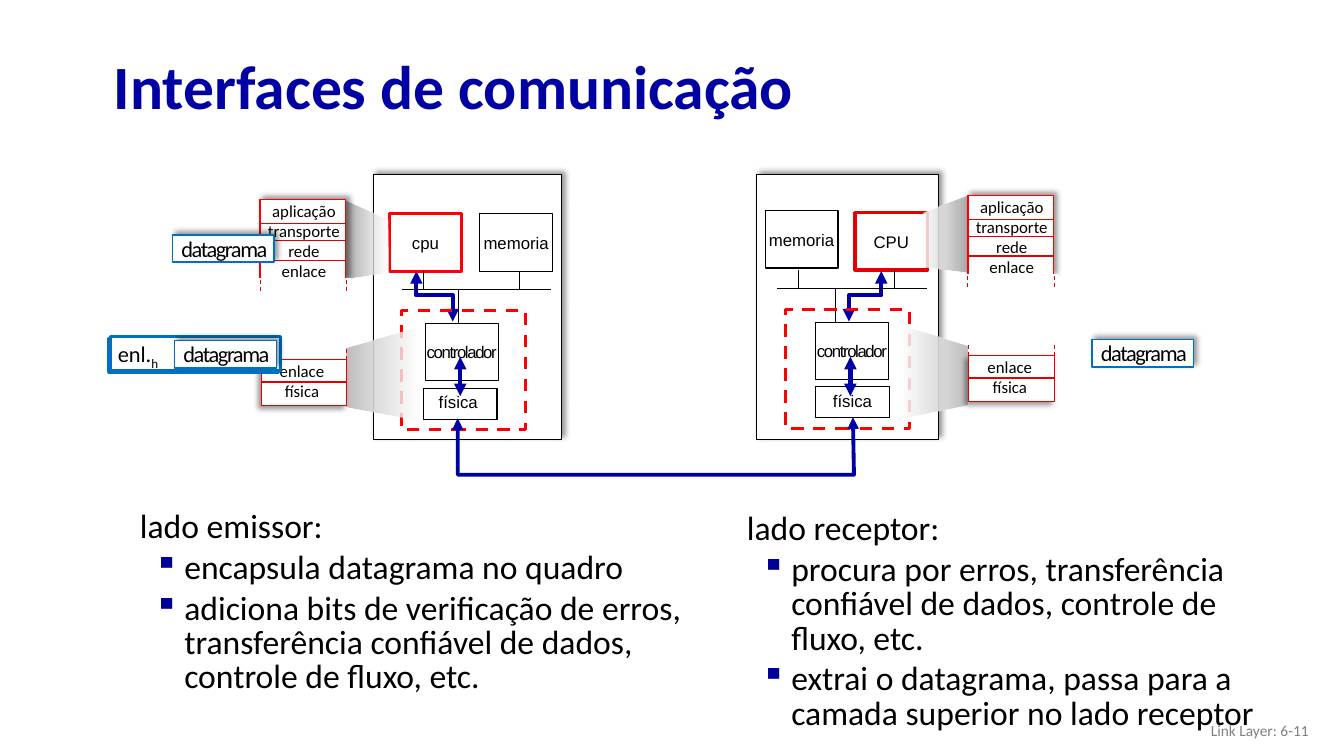
from pptx import Presentation
from pptx.dml.color import RGBColor
from pptx.enum.dml import MSO_LINE
from pptx.enum.shapes import MSO_CONNECTOR, MSO_SHAPE
from pptx.enum.text import MSO_ANCHOR, PP_ALIGN
from pptx.oxml.ns import qn
from pptx.util import Inches, Pt
from lxml import etree

# Content: positions in inches
TITLE = "Interfaces de comunicação"
FOOTER = "Link Layer: 6-11"
UPPER_LAYERS = ["aplicação", "transporte", "rede", "enlace"]
LOWER_LAYERS = ["enlace", "física"]
BLACK, WHITE, NAVY, RED, CRIMSON, BLUE = "000000", "FFFFFF", "0000A8", "FF0000", "E40000", "0070C0"

HOSTS = [
    dict(case=(7.5, 1.73, 1.81, 2.63), physical=(8.09, 3.83), physical_label=(8.16, 3.83),
         controller=(8.09, 3.2), bus=(7.71, 2.86), bus_drop=8.29, stubs=(7.92, 8.87),
         memory=("memoria", 7.59, 2.09, BLACK, 1), cpu=("CPU", 8.48, 2.11, CRIMSON, 2.25),
         cpu_path=(8.74, 8.42), internal=8.435, card=(7.79, 3.07)),
    dict(case=(3.7, 1.73, 1.87, 2.63), physical=(4.2, 3.85), physical_label=(4.25, 3.84),
         controller=(4.22, 3.21), bus=(3.99, 2.87), bus_drop=4.55, stubs=(4.2, 5.15),
         memory=("memoria", 4.76, 2.12, BLACK, 0.75), cpu=("cpu", 3.86, 2.12, RED, 2.25),
         cpu_path=(4.13, 4.49), internal=4.565, card=(3.98, 3.08)),
]
STACKS = [
    dict(origin=(2.58, 1.98), angle=0, lower_ticks=[0.86],
         lower_fan=[(4.16, 3.24), (3.44, 3.45), (3.44, 4.03), (4.17, 4.17)], lower_opacity=74,
         upper_fan=[(3.84, 2.18), (3.43, 1.99), (3.43, 2.76), (3.85, 2.7)], upper_opacity=66),
    dict(origin=(9.6, 1.94), angle=180, lower_ticks=[0.01, 0.86],
         lower_fan=[(8.92, 3.22), (9.6, 3.43), (9.6, 4.01), (8.92, 4.15)], lower_opacity=82,
         upper_fan=[(9.16, 2.11), (9.62, 1.93), (9.62, 2.7), (9.14, 2.64)], upper_opacity=81),
]
LINK = [(4.54, 4.15), (4.54, 4.71), (8.47, 4.71), (8.46, 4.14)]
FRAMES = [(1.08, 3.36), (1.1, 3.34)]
DATAGRAMS = [(1.73, 3.38), (1.71, 2.33), (10.83, 3.37)]
NOTES = [
    ((1.29, 5.02, 5.74, 2.12), "lado emissor:",
     ["encapsula datagrama no quadro",
      "adiciona bits de verificação de erros, transferência confiável de dados, "
      "controle de fluxo, etc."]),
    ((7.31, 5.04, 5.28, 2.02), "lado receptor:",
     ["procura por erros, transferência confiável de dados, controle de fluxo, etc.",
      "extrai o datagrama, passa para a camada superior no lado receptor"]),
]

prs = Presentation()
prs.slide_width, prs.slide_height = Inches(13.33), Inches(7.5)
slide = prs.slides.add_slide(prs.slide_layouts[5])
shapes = slide.shapes


def rgb(color):
    return RGBColor.from_string(color)


def sub(parent, tag, **attributes):
    child = etree.SubElement(parent, qn(tag))
    for name, value in attributes.items():
        child.set(name, str(value))
    return child


def write(frame, paragraphs, size=12, font="Calibri", color=BLACK, bold=False, align=PP_ALIGN.LEFT,
          anchor=MSO_ANCHOR.TOP, wrap=True, tracking=0, spacing=None, bullets_from=None, subscript=""):
    frame.word_wrap, frame.vertical_anchor = wrap, anchor
    for i, text in enumerate(paragraphs):
        p = frame.paragraphs[0] if i == 0 else frame.add_paragraph()
        p.alignment = align
        if bullets_from is not None and i >= bullets_from:
            props = p._p.get_or_add_pPr()
            props.set("marL", str(Inches(0.44)))
            props.set("indent", str(Inches(-0.3)))
            sub(sub(props, "a:buClr"), "a:srgbClr", val="000099")
            sub(props, "a:buChar", char="▪")
            p.space_before = Pt(size * 0.2)
        if spacing:
            p.line_spacing = spacing
        for part in filter(None, [text, subscript]):
            run = p.add_run()
            run.text = part
            run.font.size, run.font.name, run.font.bold = Pt(size), font, bold
            run.font.color.rgb = rgb(color)
            if tracking:
                run._r.get_or_add_rPr().set("spc", str(tracking * 100))
            if part == subscript:
                run._r.get_or_add_rPr().set("baseline", "-25000")


def label(box, paragraphs, **text_format):
    write(shapes.add_textbox(*map(Inches, box)).text_frame, paragraphs, **text_format)


def outline(shape, color, width, dashed=False, arrows=False):
    shape.line.color.rgb, shape.line.width = rgb(color), Pt(width)
    if dashed:
        shape.line.dash_style = MSO_LINE.DASH
    if arrows:
        ln = shape._element.spPr.find(qn("a:ln"))
        sub(ln, "a:headEnd", type="triangle")
        sub(ln, "a:tailEnd", type="triangle")


def rect(box, color=None, width=0.75, filled=True, dashed=False, shadow=None, text=None, **text_format):
    shape = shapes.add_shape(MSO_SHAPE.RECTANGLE, *map(Inches, box))
    shape.shadow.inherit = False
    if filled:
        shape.fill.solid()
        shape.fill.fore_color.rgb = rgb(WHITE)
    else:
        shape.fill.background()
    if color:
        outline(shape, color, width, dashed)
    else:
        shape.line.fill.background()
    if shadow:
        effects = shape._element.spPr.find(qn("a:effectLst"))
        cast = sub(effects, "a:outerShdw", blurRad=Pt(4), dist=Pt(3), dir=shadow * 60000)
        sub(sub(cast, "a:srgbClr", val=BLACK), "a:alpha", val=40000)
    if text:
        write(shape.text_frame, [text], font="Arial", align=PP_ALIGN.CENTER,
              anchor=MSO_ANCHOR.MIDDLE, wrap=False, **text_format)


def line(x1, y1, x2, y2, color=BLACK, width=0.75, **style):
    connector = shapes.add_connector(MSO_CONNECTOR.STRAIGHT, *map(Inches, (x1, y1, x2, y2)))
    outline(connector, color, width, **style)
    sub(connector._element.spPr, "a:effectLst")


def outline_path(points, close):
    corners = [(Inches(x), Inches(y)) for x, y in points]
    builder = shapes.build_freeform(*corners[0])
    builder.add_line_segments(corners[1:], close=close)
    shape = builder.convert_to_shape()
    shape.shadow.inherit = False
    return shape


def arrow_path(points, width):
    path = outline_path(points, close=False)
    path.fill.background()
    outline(path, NAVY, width, arrows=True)


def fan(points, shade, opacity, angle):
    beam = outline_path(points, close=True)
    beam.line.fill.background()
    beam.fill.gradient()
    beam.fill.gradient_angle = angle
    for stop, color in zip(beam.fill.gradient_stops, (shade, WHITE)):
        stop.color.rgb = rgb(color)
    clear_end = beam._element.spPr.findall(".//" + qn("a:srgbClr"))[-1]
    sub(clear_end, "a:alpha", val=opacity * 1000)


def draw_host(host):
    rect(host["case"], BLACK, shadow=315)
    rect((*host["physical"], 0.73, 0.31), BLACK)
    rect((*host["controller"], 0.72, 0.57), BLACK, text="controlador", tracking=-1)
    label((*host["physical_label"], 0.59, 0.5), ["física"], font="Arial", align=PP_ALIGN.CENTER, wrap=False)
    start, end = host["cpu_path"]
    arrow_path([(start, 2.69), (start, 2.93), (end, 2.93), (end, 3.19)], 3)
    left, bus = host["bus"]
    line(left, bus, left + 1.48, bus)
    line(host["bus_drop"], bus + 0.33, host["bus_drop"], bus)
    for name, x, y, color, width in (host["memory"], host["cpu"]):
        rect((x, y, 0.72, 0.57), color, width, text=name)
    for x in host["stubs"]:
        line(x, bus, x, bus - 0.18)
    line(host["internal"], 3.54, host["internal"], 3.93, NAVY, 3, arrows=True)
    rect((*host["card"], 1.23, 1.18), RED, 2.25, filled=False, dashed=True)


def draw_stack(stack):
    x, y = stack["origin"]
    centred = dict(align=PP_ALIGN.CENTER, wrap=False)
    fan(stack["lower_fan"], "BFBFBF", stack["lower_opacity"], stack["angle"])
    rect((x + 0.01, y + 1.59, 0.85, 0.45), CRIMSON, shadow=135)
    fan(stack["upper_fan"], "A6A6A6", stack["upper_opacity"], stack["angle"])
    rect((x, y, 0.85, 0.8), RED, 1, shadow=315)
    label((x - 0.03, y - 0.04, 0.93, 0.91), UPPER_LAYERS, **centred)
    for dy in (0.24, 0.41, 0.6):
        line(x, y + dy, x + 0.85, y + dy, CRIMSON)
    rect((x - 0.06, y + 0.78, 0.96, 0.2))
    for dx in (0, 0.86):
        line(x + dx, y + 0.8, x + dx, y + 0.91, CRIMSON, dashed=True)
    label((x + 0.09, y + 1.55, 0.65, 0.51), LOWER_LAYERS, **centred)
    line(x + 0.01, y + 1.81, x + 0.86, y + 1.81, CRIMSON)
    for dx in stack["lower_ticks"]:
        line(x + dx, y + 1.48, x + dx, y + 1.59, CRIMSON, dashed=True)


# Title
title = shapes.title
title.left, title.top, title.width, title.height = map(Inches, (1.03, 0.4, 11.5, 0.98))
write(title.text_frame, [TITLE], size=44, color="0000A3", bold=True, anchor=MSO_ANCHOR.MIDDLE, spacing=0.9)

# Hosts, protocol stacks and the link between them
for host in HOSTS:
    draw_host(host)
for stack in STACKS:
    draw_stack(stack)
arrow_path(LINK, 2.75)

# Notes for each side
for box, heading, points in NOTES:
    label(box, [heading, *points], size=24, spacing=0.85, bullets_from=1)

# Link frame and datagrams
for x, y in FRAMES:
    rect((x, y, 1.68, 0.34), BLUE, 2)
label((1.07, 3.33, 0.67, 0.37), ["enl."], size=16, subscript="h")
for x, y in DATAGRAMS:
    rect((x, y, 1.01, 0.27), BLUE, 1, shadow=315)
    label((x - 0.01, y - 0.05, 1.15, 0.37), ["datagrama"], size=16, tracking=-1)

# Footer
label((10.08, 7.05, 3, 0.4), [FOOTER], size=11, color="808080", align=PP_ALIGN.RIGHT, anchor=MSO_ANCHOR.MIDDLE)

prs.save("out.pptx")
